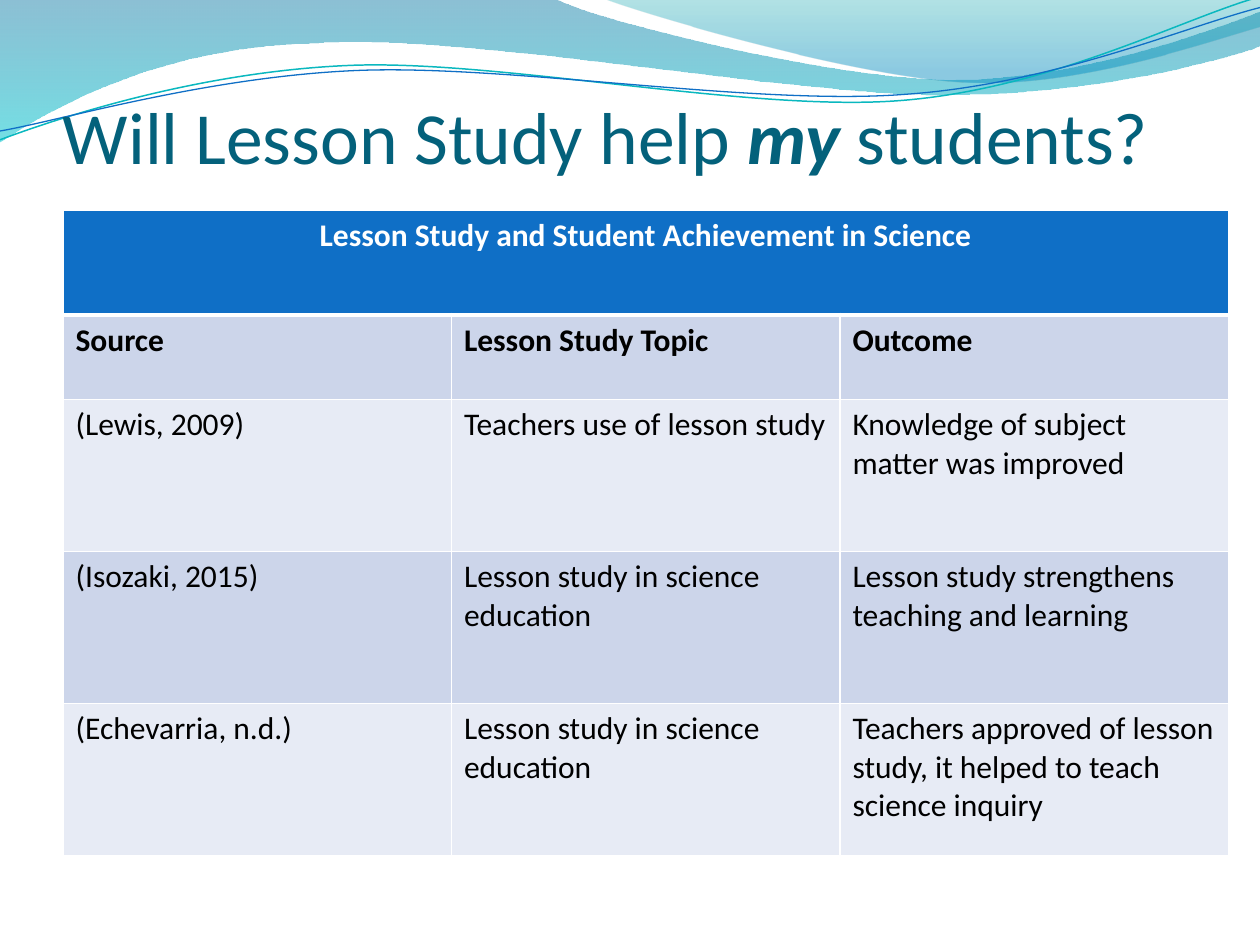
from lxml import etree
from pptx import Presentation
from pptx.dml.color import RGBColor
from pptx.enum.text import MSO_ANCHOR, PP_ALIGN
from pptx.oxml.ns import qn
from pptx.util import Inches, Pt

BOTTOM = MSO_ANCHOR.BOTTOM
LEFT, CENTER = PP_ALIGN.LEFT, PP_ALIGN.CENTER

WHITE = RGBColor(0xFF, 0xFF, 0xFF)
BLACK = RGBColor(0x00, 0x00, 0x00)
TITLE_TEAL = RGBColor(0x04, 0x61, 0x7B)
BLUE = RGBColor(0x0F, 0x6F, 0xC6)
AQUA = RGBColor(0x0A, 0xB8, 0xBF)
BAND_DARK = RGBColor(0xCC, 0xD5, 0xEA)
BAND_LIGHT = RGBColor(0xE7, 0xEB, 0xF5)
DEEP_SEA = RGBColor(0x00, 0x74, 0xA1)
CYAN = RGBColor(0x00, 0xC6, 0xCF)
GREEN_SEA = RGBColor(0x00, 0xA1, 0xA9)
SKY = RGBColor(0x00, 0x8B, 0xBF)

FONT = "Calibri"

# Each wave is a start point followed by segments:
# one point is a straight line, three points are a cubic curve.
WIDE_WAVE = [
    (0, 0), [(4.4, -0.01)],
    [(4.76, 0.17), (6.64, 0.63), (7.58, 0.63)],
    [(8.53, 0.63), (9.58, 0.26), (10, 0.09)],
    [(10.01, 0.36)],
    [(9.83, 0.44), (8.7, 0.76), (7.46, 0.75)],
    [(6.22, 0.75), (3.82, 0.28), (2.57, 0.34)],
    [(1.29, 0.36), (0.46, 0.83), (-0.01, 1.13)],
    [(0, 0)],
]
RIGHT_WAVE = [
    (4.79, -0.01),
    [(5.09, 0.11), (6.82, 0.62), (7.69, 0.65)],
    [(8.56, 0.69), (9.61, 0.32), (10, 0.21)],
    [(10, 0)],
    [(4.79, -0.01)],
]
AQUA_LINE = [
    (0, 1.11),
    [(0.48, 0.93), (1.58, 0.57), (2.77, 0.52)],
    [(3.95, 0.47), (5.93, 0.89), (7.13, 0.8)],
    [(8.33, 0.71), (9.38, 0.15), (9.98, -0.02)],
]
BLUE_LINE = [
    (0, 1.04),
    [(0.47, 0.96), (1.64, 0.61), (2.83, 0.56)],
    [(4.03, 0.51), (5.97, 0.84), (7.17, 0.75)],
    [(8.36, 0.67), (9.41, 0.21), (10, 0.06)],
]

HEADING = "Lesson Study and Student Achievement in Science"
ROWS = [
    ("Source", "Lesson Study Topic", "Outcome"),
    ("(Lewis, 2009)", "Teachers use of lesson study",
     "Knowledge of subject matter was improved"),
    ("(Isozaki, 2015)", "Lesson study in science education",
     "Lesson study strengthens teaching and learning"),
    ("(Echevarria, n.d.)", "Lesson study in science education",
     "Teachers approved of lesson study, it helped to teach science inquiry"),
]
HEADING_HEIGHT, NAMES_HEIGHT = 0.83, 0.67


def bend_segments(shape, segments):
    """Turn each run of three straight steps into one cubic curve."""
    steps = iter(list(shape._element.spPr.iter(qn("a:lnTo"))))
    for segment in segments:
        group = [next(steps) for _ in segment]
        if len(group) == 3:
            curve = etree.Element(qn("a:cubicBezTo"))
            group[0].addprevious(curve)
            for step in group:
                curve.append(step[0])
                step.getparent().remove(step)


def add_wave(slide, left, top, wave, closed):
    start, *segments = wave
    points = [(Inches(left + x), Inches(top + y))
              for x, y in (start, *(p for segment in segments for p in segment))]
    builder = slide.shapes.build_freeform(*points[0], scale=1.0)
    builder.add_line_segments(points[1:], close=closed)
    shape = builder.convert_to_shape()
    bend_segments(shape, segments)
    shape.shadow.inherit = False
    return shape


def add_filled_wave(slide, left, top, wave, stops):
    shape = add_wave(slide, left, top, wave, True)
    shape.line.fill.background()
    shape.fill.gradient()
    shape.fill.gradient_angle = 270  # top to bottom
    elements = shape._element.spPr.iter(qn("a:gs"))
    for stop, element, (position, color, opacity) in zip(
            shape.fill.gradient_stops, elements, stops):
        stop.position = position
        stop.color.rgb = color
        alpha = etree.SubElement(element[0], qn("a:alpha"))
        alpha.set("val", str(opacity * 1000))


def add_line_wave(slide, left, top, wave, color, width):
    shape = add_wave(slide, left, top, wave, False)
    shape.fill.background()
    shape.line.color.rgb = color
    shape.line.width = Pt(width)


def add_wave_header(slide, left, top):
    add_filled_wave(slide, left, top, WIDE_WAVE,
                    [(0, DEEP_SEA, 45), (1, CYAN, 55)])
    add_filled_wave(slide, left, top, RIGHT_WAVE,
                    [(0, GREEN_SEA, 30), (0.8, SKY, 45)])
    add_line_wave(slide, left, top, AQUA_LINE, AQUA, 0.85)
    add_line_wave(slide, left, top, BLUE_LINE, BLUE, 0.75)


def add_run(paragraph, text, size, color, bold=False, italic=False):
    run = paragraph.add_run()
    run.text = text
    font = run.font
    font.name, font.size = FONT, Pt(size)
    font.bold, font.italic = bold, italic
    font.color.rgb = color


def add_title(slide, left, top, width, height):
    box = slide.shapes.add_textbox(Inches(left), Inches(top),
                                   Inches(width), Inches(height))
    frame = box.text_frame
    frame.word_wrap = True
    frame.vertical_anchor = BOTTOM
    frame.margin_left = frame.margin_right = frame.margin_bottom = 0
    frame.margin_top = Inches(0.05)
    paragraph = frame.paragraphs[0]
    for text, strong in (("Will Lesson Study help ", False), ("my", True),
                         (" students?", False)):
        add_run(paragraph, text, 42, TITLE_TEAL, strong, strong)


def set_borders(cell, top=1, bottom=1):
    properties = cell._tc.get_or_add_tcPr()
    for side, width in (("L", 1), ("R", 1), ("T", top), ("B", bottom)):
        line = etree.SubElement(properties, qn(f"a:ln{side}"), w=str(Pt(width)))
        fill = etree.SubElement(line, qn("a:solidFill"))
        etree.SubElement(fill, qn("a:srgbClr"), val=str(WHITE))


def fill_cell(cell, text, fill, color, bold, alignment=LEFT):
    cell.fill.solid()
    cell.fill.fore_color.rgb = fill
    paragraph = cell.text_frame.paragraphs[0]
    paragraph.alignment = alignment
    add_run(paragraph, text, 18, color, bold)


def add_study_table(slide, left, top, width, height):
    studies = len(ROWS) - 1
    study_height = (height - HEADING_HEIGHT - NAMES_HEIGHT) / studies
    heights = [HEADING_HEIGHT, NAMES_HEIGHT] + [study_height] * studies
    table = slide.shapes.add_table(len(heights), 3, Inches(left), Inches(top),
                                   Inches(width), Inches(height)).table
    table.first_row = table.horz_banding = False
    for row, row_height in zip(table.rows, heights):
        row.height = Inches(row_height)

    # Heading across all columns, with a thick rule below
    for cell in table.rows[0].cells:
        set_borders(cell, bottom=3)
    table.cell(0, 0).merge(table.cell(0, 2))
    fill_cell(table.cell(0, 0), HEADING, BLUE, WHITE, True, CENTER)

    # Column names and studies in alternating bands
    for row_index, texts in enumerate(ROWS, start=1):
        band = BAND_DARK if row_index % 2 else BAND_LIGHT
        for column_index, text in enumerate(texts):
            cell = table.cell(row_index, column_index)
            set_borders(cell, top=3 if row_index == 1 else 1)
            fill_cell(cell, text, band, BLACK, row_index == 1)


def main():
    presentation = Presentation()
    presentation.slide_width, presentation.slide_height = Inches(10), Inches(7.5)
    slide = presentation.slides.add_slide(presentation.slide_layouts[6])
    add_wave_header(slide, 0, 0)
    add_title(slide, 0.5, 0.17, 9, 1.25)
    add_study_table(slide, 0.5, 1.67, 9.25, 5.12)
    presentation.save("out.pptx")


if __name__ == "__main__":
    main()
